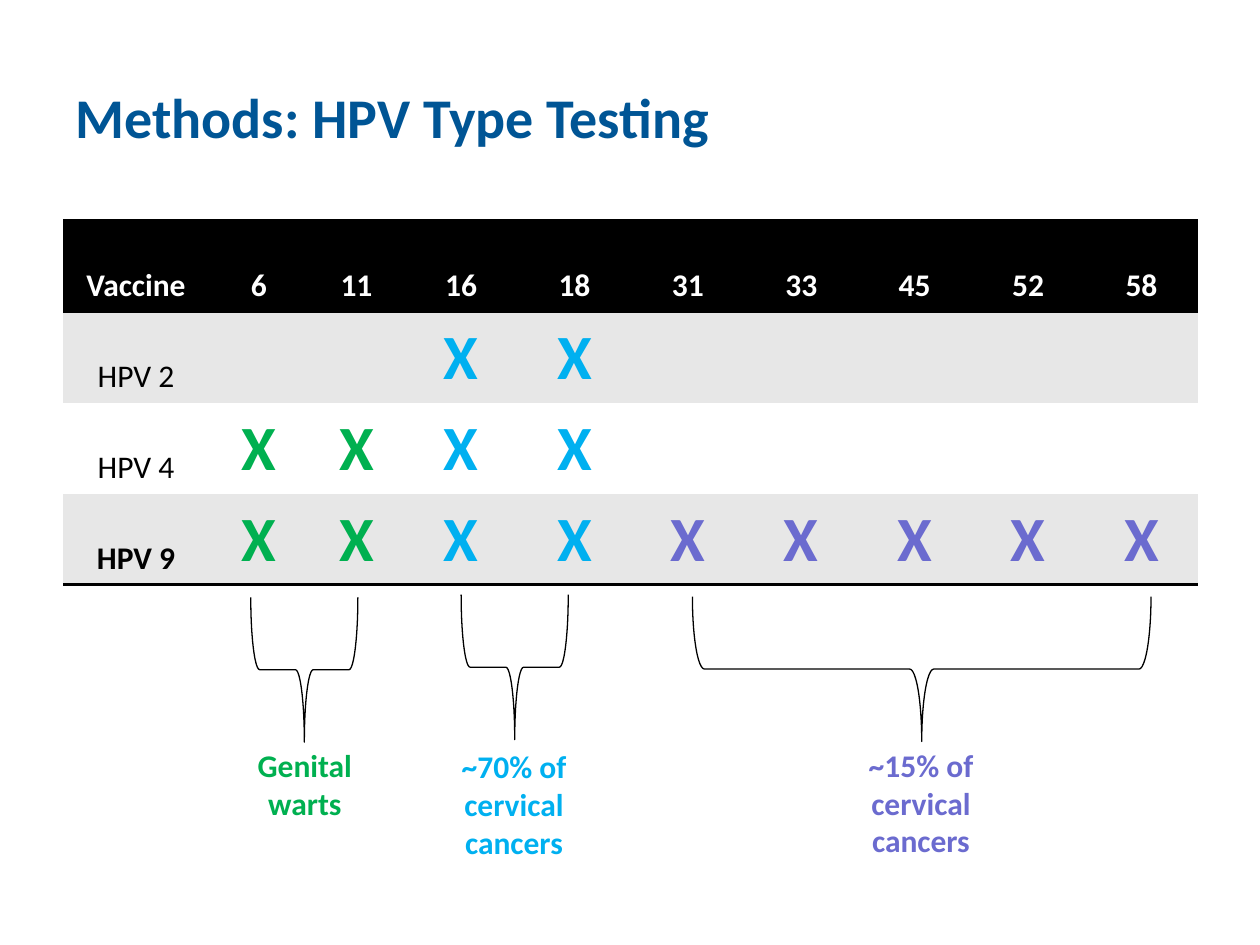
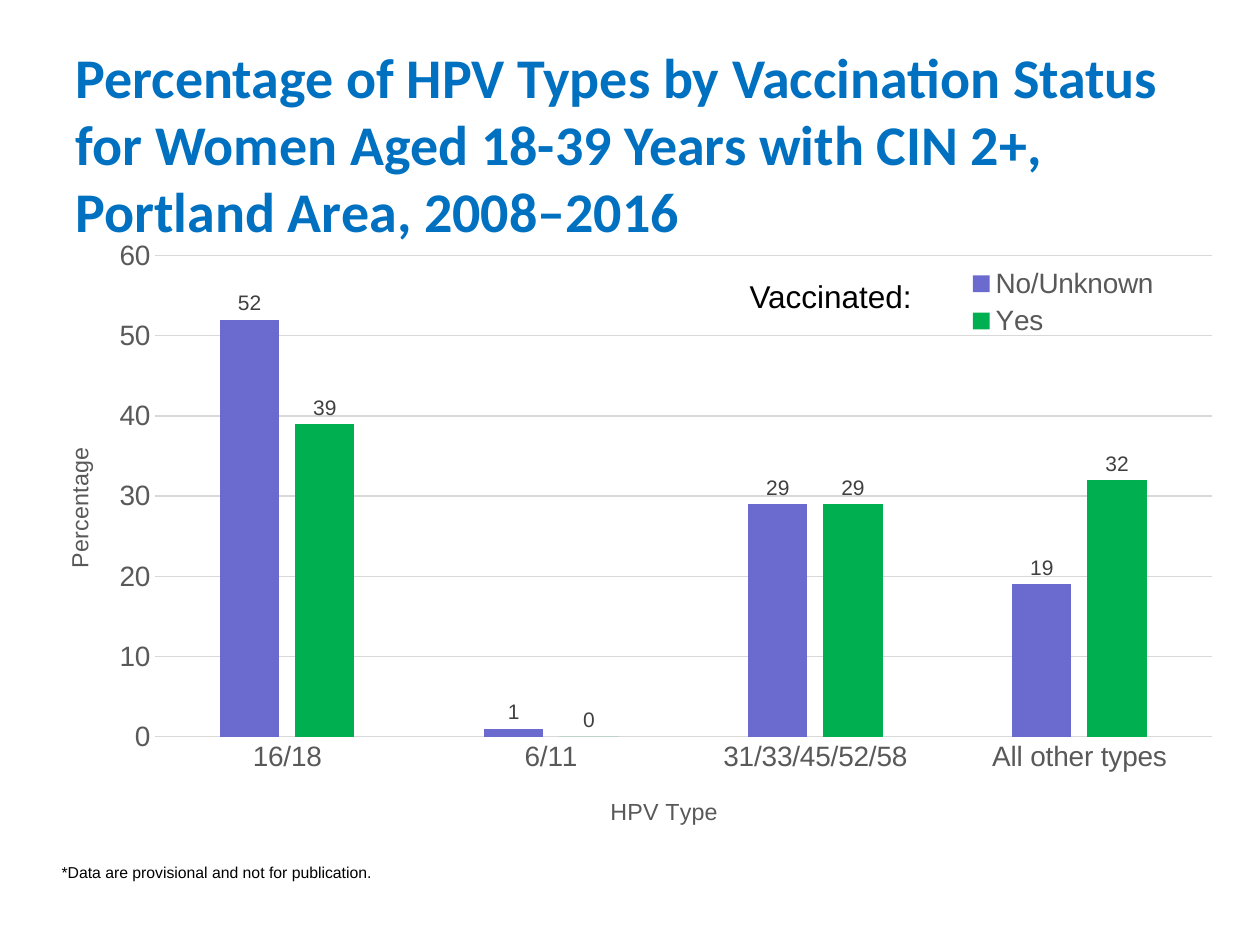
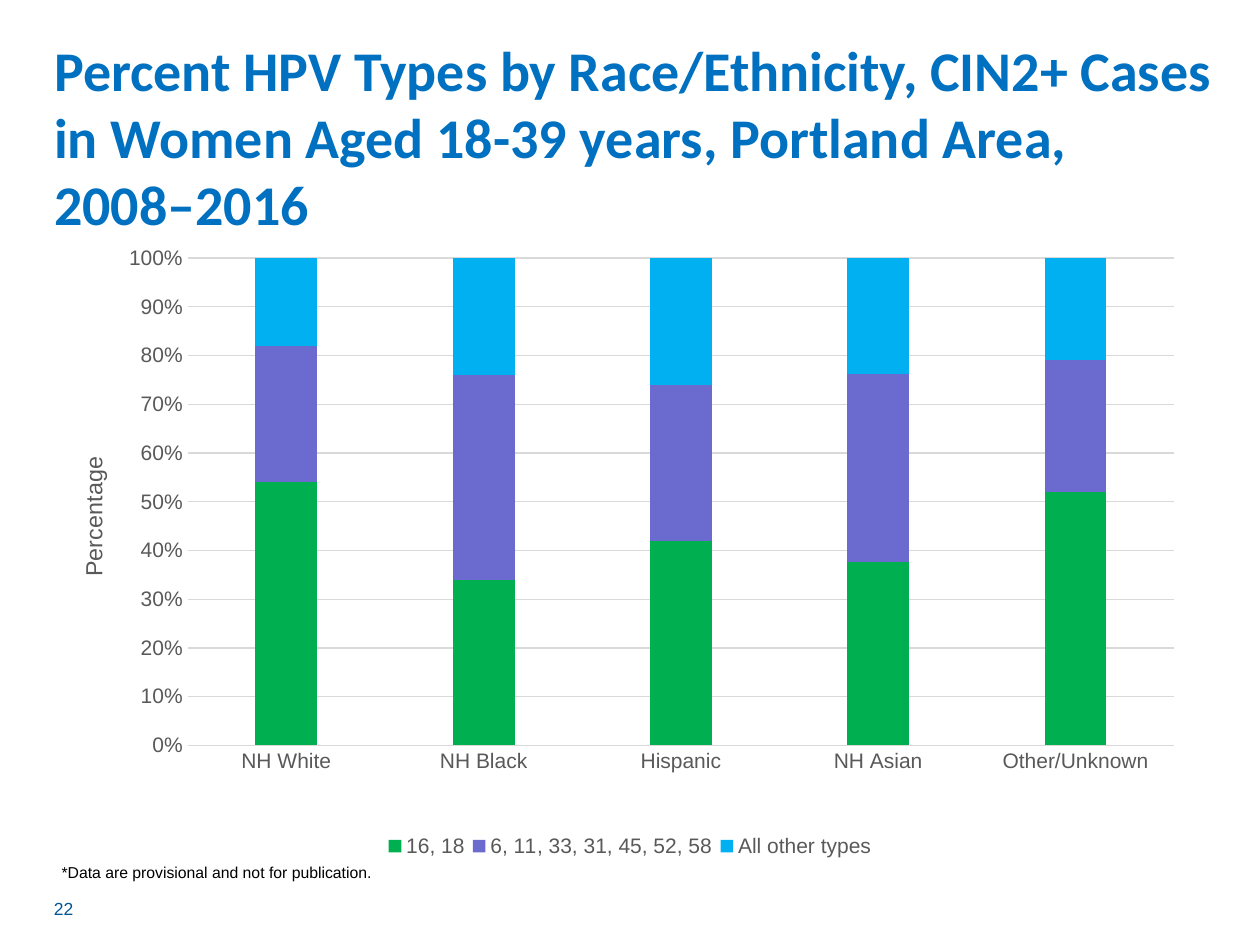
from lxml import etree
from pptx import Presentation
from pptx.chart.data import CategoryChartData
from pptx.dml.color import RGBColor
from pptx.enum import chart as ch, shapes, text
from pptx.oxml import ns
from pptx.util import Inches, Pt

BLACK = RGBColor(0x00, 0x00, 0x00)
WHITE = RGBColor(0xFF, 0xFF, 0xFF)
NAVY = RGBColor(0x00, 0x55, 0x95)
BLUE = RGBColor(0x00, 0x70, 0xC0)
SKY = RGBColor(0x00, 0xB0, 0xF0)
GREEN = RGBColor(0x00, 0xB0, 0x50)
VIOLET = RGBColor(0x6B, 0x6B, 0xCF)
BAND = RGBColor(0xE7, 0xE7, 0xE7)
GRID = RGBColor(0xD9, 0xD9, 0xD9)
GRAY = RGBColor(0x59, 0x59, 0x59)
DARK_GRAY = RGBColor(0x40, 0x40, 0x40)

CENTER = text.PP_ALIGN.CENTER
NO_STYLE = "{2D5ABB26-0587-4C30-8999-92F81FD0307C}"


def add_text(slide, box, words, size, color=BLACK, font="Arial", bold=False, align=None):
    frame = slide.shapes.add_textbox(*map(Inches, box)).text_frame
    frame.word_wrap = True
    frame.text = words
    paragraph = frame.paragraphs[0]
    paragraph.alignment = align
    run_font = paragraph.runs[0].font
    run_font.name, run_font.size, run_font.bold = font, Pt(size), bold
    run_font.color.rgb = color


def place(element, **settings):
    """Give a chart part a manual layout, as fractions of the chart."""
    for old in element.findall(ns.qn("c:layout")):
        element.remove(old)
    layout = etree.Element(ns.qn("c:layout"))
    manual = etree.SubElement(layout, ns.qn("c:manualLayout"))
    for key, value in settings.items():
        etree.SubElement(manual, ns.qn(f"c:{key}")).set("val", str(value))
    overlay = element.find(ns.qn("c:overlay"))
    element.insert(0 if overlay is None else element.index(overlay), layout)


prs = Presentation()
prs.slide_width, prs.slide_height = Inches(10), Inches(7.5)

# Slides and titles
titles = [
    ("Methods: HPV Type Testing", NAVY, (0.5, 0.3, 9, 1.25)),
    ("Percentage of HPV Types by Vaccination Status for Women Aged 18-39 Years "
     "with CIN 2+, Portland Area, 2008–2016", BLUE, (0.5, 0.3, 9, 1.67)),
    ("Percent HPV Types by Race/Ethnicity, CIN2+ Cases in Women Aged 18-39 years, "
     "Portland Area, 2008–2016", BLUE, (0.33, 0.3, 9.44, 1.56)),
]
for words, color, box in titles:
    title = prs.slides.add_slide(prs.slide_layouts[5]).shapes.title
    title.left, title.top, title.width, title.height = map(Inches, box)
    frame = title.text_frame
    frame.text = words
    frame.word_wrap = True
    frame.auto_size = text.MSO_AUTO_SIZE.NONE
    frame.vertical_anchor = text.MSO_ANCHOR.MIDDLE
    frame.paragraphs[0].alignment = text.PP_ALIGN.LEFT
    font = frame.paragraphs[0].runs[0].font
    font.name, font.size, font.bold = "Calibri", Pt(32), True
    font.color.rgb = color
methods, by_status, by_race = prs.slides

# Vaccine table
hpv_types = ["6", "11", "16", "18", "31", "33", "45", "52", "58"]
type_colors = [GREEN] * 2 + [SKY] * 2 + [VIOLET] * 5
rows = [
    ["Vaccine"] + hpv_types,
    ["HPV 2"] + [""] * 2 + ["X"] * 2 + [""] * 5,
    ["HPV 4"] + ["X"] * 4 + [""] * 5,
    ["HPV 9"] + ["X"] * 9,
]
row_fills = [BLACK, BAND, WHITE, BAND]
ruled_sides = [("a:lnT", "a:lnB"), (), (), ("a:lnB",)]
vaccines = methods.shapes.add_table(
    4, 10, Inches(0.5), Inches(1.75), Inches(9), Inches(2.89)).table
vaccines._tbl.tblPr.find(ns.qn("a:tableStyleId")).text = NO_STYLE
for column, width in zip(vaccines.columns, [1.16, 0.79, 0.76] + [0.9] * 7):
    column.width = Inches(width)
for r, row in enumerate(rows):
    for c, words in enumerate(row):
        cell = vaccines.cell(r, c)
        for side in ruled_sides[r]:
            line = etree.SubElement(cell._tc.get_or_add_tcPr(), ns.qn(side), w=str(Pt(2)))
            fill = etree.SubElement(line, ns.qn("a:solidFill"))
            etree.SubElement(fill, ns.qn("a:srgbClr"), val=str(BLACK))
        cell.fill.solid()
        cell.fill.fore_color.rgb = row_fills[r]
        cell.vertical_anchor = text.MSO_ANCHOR.BOTTOM
        cell.text = words
        paragraph = cell.text_frame.paragraphs[0]
        paragraph.alignment = CENTER
        marked = words == "X"
        for run in paragraph.runs:
            run.font.name = "Calibri"
            run.font.size = Pt(36 if marked else 18)
            run.font.bold = marked or r in (0, 3)
            run.font.color.rgb = type_colors[c - 1] if marked else WHITE if r == 0 else BLACK

# Braces and what each group of types causes
groups = [
    ("Genital warts", GREEN, (1.84, 4.89, 0.85), (1.84, 5.87, 1.16, 0.71)),
    ("~70% of cervical cancers", SKY, (3.51, 4.87, 0.85), (3.5, 5.88, 1.16, 1.01)),
    ("~15% of cervical cancers", VIOLET, (6.74, 3.49, 3.64), (6.73, 5.87, 1.16, 1.01)),
]
for words, color, (left, top, span), box in groups:
    brace = methods.shapes.add_shape(
        shapes.MSO_SHAPE.RIGHT_BRACE, Inches(left), Inches(top), Inches(1.15), Inches(span))
    brace.rotation = 90
    brace.shadow.inherit = False
    brace.fill.background()
    brace.line.color.rgb = BLACK
    brace.line.width = Pt(0.75)
    add_text(methods, box, words, 18, color, "Calibri", True, CENTER)

# Charts
charts = [
    dict(slide=by_status, kind=ch.XL_CHART_TYPE.COLUMN_CLUSTERED, box=(0.29, 1.83, 9.42, 4.96),
         categories=["16/18", "6/11", "31/33/45/52/58", "All other types"],
         series=[("No/Unknown", [52, 1, 29, 19], VIOLET), ("Yes", [39, 0, 29, 32], GREEN)],
         size=16, overlap=-27, tick_format="0",
         plot=dict(x=0.1, y=0.04, w=0.89, h=0.77),
         legend_at=ch.XL_LEGEND_POSITION.CORNER, legend=dict(x=0.78, y=0.05, w=0.17, h=0.13),
         value_title=dict(x=0.02, y=0.34), category_title=dict(x=0.48, y=0.9)),
    dict(slide=by_race, kind=ch.XL_CHART_TYPE.COLUMN_STACKED_100, box=(0.5, 1.9, 9, 4.96),
         categories=["NH White", "NH Black", "Hispanic", "NH Asian", "Other/Unknown"],
         series=[("16, 18", [54, 34, 42, 38, 52], GREEN),
                 ("6, 11, 33, 31, 45, 52, 58", [28, 42, 32, 39, 27], VIOLET),
                 ("All other types", [18, 24, 26, 24, 21], SKY)],
         size=12, overlap=100, tick_format="0%",
         plot=dict(x=0.11, y=0.03, w=0.87, h=0.78),
         legend_at=ch.XL_LEGEND_POSITION.BOTTOM, legend=dict(x=0.28, y=0.95, w=0.44, h=0.05),
         value_title=dict(x=0.01, y=0.34), category_title=None),
]
for item in charts:
    data = CategoryChartData(number_format="0")
    data.categories = item["categories"]
    for name, values, _ in item["series"]:
        data.add_series(name, values)
    chart = item["slide"].shapes.add_chart(
        item["kind"], *map(Inches, item["box"]), data).chart
    chart.has_title = False
    chart.font.name, chart.font.size = "Arial", Pt(10)
    chart.font.color.rgb = BLACK
    place(chart._chartSpace.chart.plotArea, layoutTarget="inner",
          xMode="edge", yMode="edge", **item["plot"])

    bars = chart.plots[0]
    bars.gap_width, bars.overlap = 219, item["overlap"]
    bars.vary_by_categories = False
    for series, (_, _, color) in zip(bars.series, item["series"]):
        series.format.fill.solid()
        series.format.fill.fore_color.rgb = color
        series.invert_if_negative = False

    axes = [(chart.category_axis, "HPV Type", item["category_title"]),
            (chart.value_axis, "Percentage", item["value_title"])]
    for axis, words, position in axes:
        axis.major_tick_mark = axis.minor_tick_mark = ch.XL_TICK_MARK.NONE
        axis.tick_labels.font.name = "Arial"
        axis.tick_labels.font.size = Pt(item["size"])
        axis.tick_labels.font.color.rgb = GRAY
        axis.has_title = position is not None
        if position:
            frame = axis.axis_title.text_frame
            frame.text = words
            font = frame.paragraphs[0].runs[0].font
            font.name, font.size, font.bold = "Arial", Pt(13.3), False
            font.color.rgb = GRAY
            if axis is chart.value_axis:
                frame._txBody.bodyPr.set("rot", "-5400000")
            place(axis.axis_title._element, xMode="edge", yMode="edge", **position)
    chart.value_axis.format.line.fill.background()
    chart.value_axis.tick_labels.number_format = item["tick_format"]
    chart.value_axis.tick_labels.number_format_is_linked = False
    for rule in (chart.category_axis.format.line, chart.value_axis.major_gridlines.format.line):
        rule.color.rgb = GRID
        rule.width = Pt(0.75)

    chart.has_legend = True
    chart.legend.position = item["legend_at"]
    chart.legend.include_in_layout = True
    chart.legend.font.name, chart.legend.font.size = "Arial", Pt(item["size"])
    chart.legend.font.color.rgb = GRAY
    place(chart.legend._element, xMode="edge", yMode="edge", **item["legend"])

    if item["slide"] is by_status:
        chart.value_axis.minimum_scale, chart.value_axis.maximum_scale = 0, 60
        chart.value_axis.major_unit = 10
        bars.has_data_labels = True
        labels = bars.data_labels
        labels.show_value = True
        labels.position = ch.XL_LABEL_POSITION.OUTSIDE_END
        labels.number_format, labels.number_format_is_linked = "0", False
        labels.font.name, labels.font.size = "Arial", Pt(12)
        labels.font.color.rgb = DARK_GRAY

    add_text(item["slide"], (0.39, 6.8, 6.58, 0.25),
             "*Data are provisional and not for publication.", 9)

add_text(by_status, (5.85, 2.15, 1.51, 0.4), "Vaccinated:", 18)
add_text(by_race, (0.33, 7.08, 2.33, 0.27), "22", 10, NAVY)

prs.save("out.pptx")
